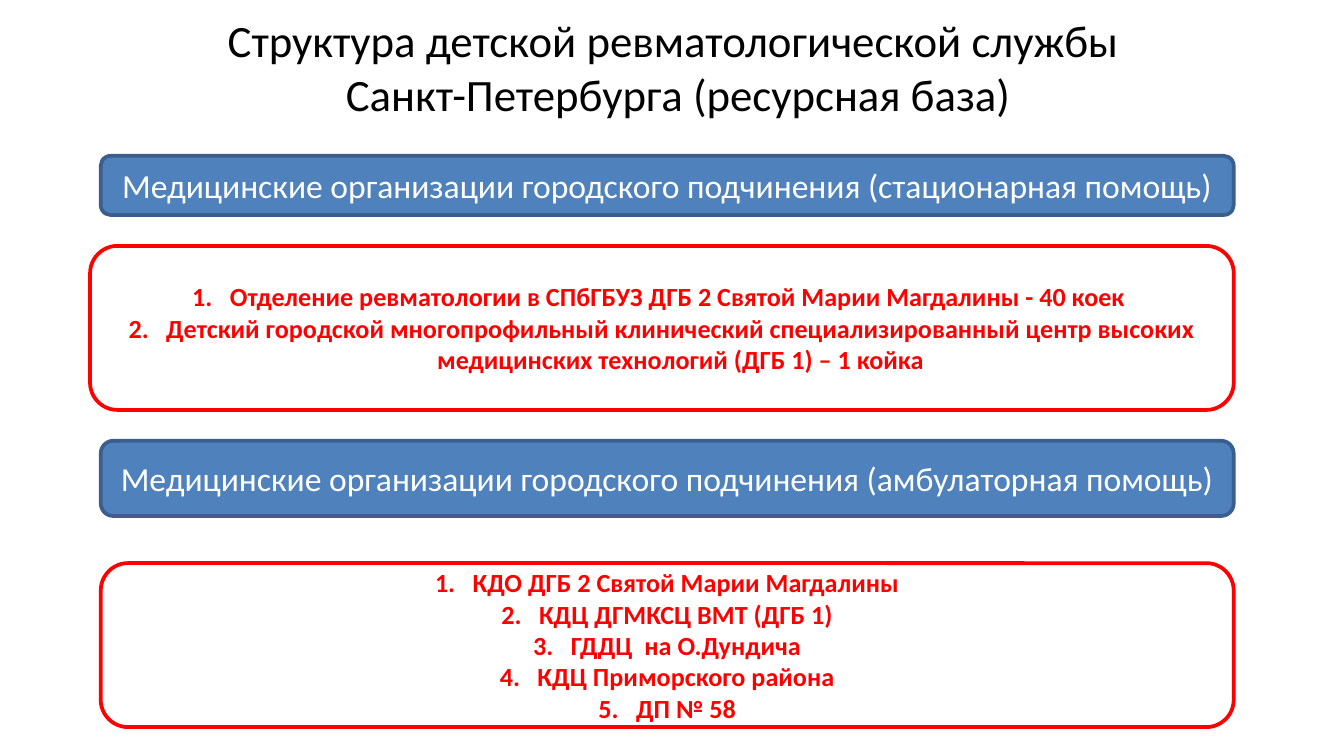
from lxml.etree import SubElement
from pptx import Presentation
from pptx.dml.color import RGBColor
from pptx.enum.shapes import MSO_SHAPE as Shape
from pptx.enum.text import MSO_ANCHOR as Anchor, MSO_AUTO_SIZE as AutoSize, PP_ALIGN as Align
from pptx.oxml.ns import qn
from pptx.util import Inches, Pt

FONT = "Calibri"
BLACK, WHITE, RED = "000000", "FFFFFF", "FF0000"
BLUE, DARK_BLUE = "4F81BD", "3A5F8C"
SLIDE_WIDTH = 10
SLIDE_HEIGHT = SLIDE_WIDTH * 9 / 16
LEFT, RIGHT = 0.75, 9.18
LIST_HEIGHT = 1.22
NUMBER_INDENT = 0.28

TITLE = ["Структура детской ревматологической службы ", "Санкт-Петербурга (ресурсная база)"]
SECTIONS = [
    {
        "heading": "Медицинские организации городского подчинения (стационарная помощь)",
        "heading_top": 1.16, "heading_height": 0.44,
        "list_left": 0.67, "list_top": 1.83,
        "items": [
            "Отделение ревматологии в СПбГБУЗ ДГБ 2 Святой Марии Магдалины - 40 коек ",
            "Детский городской многопрофильный клинический специализированный центр "
            "высоких медицинских технологий (ДГБ 1) – 1 койка",
        ],
    },
    {
        "heading": "Медицинские организации городского подчинения (амбулаторная помощь)",
        "heading_top": 3.28, "heading_height": 0.56,
        "list_left": LEFT, "list_top": 4.19,
        "items": [
            "КДО ДГБ 2 Святой Марии Магдалины",
            "КДЦ ДГМКСЦ ВМТ (ДГБ 1)",
            "ГДДЦ  на О.Дундича",
            "КДЦ Приморского района",
            "ДП № 58",
        ],
    },
]


def color(value):
    return RGBColor.from_string(value)


def add_numbering(para):
    """Number a paragraph with a hanging indent."""
    properties = para._p.get_or_add_pPr()
    properties.set("marL", str(Inches(NUMBER_INDENT)))
    properties.set("indent", str(Inches(-NUMBER_INDENT)))
    SubElement(properties, qn("a:buFont"), typeface="+mj-lt")
    SubElement(properties, qn("a:buAutoNum"), type="arabicPeriod")


def write(shape, lines, size, ink, bold=False, numbered=False):
    frame = shape.text_frame
    frame.word_wrap = True
    frame.auto_size = AutoSize.NONE
    frame.vertical_anchor = Anchor.MIDDLE
    frame.margin_left = frame.margin_right = Inches(0.07)
    frame.margin_top = frame.margin_bottom = Inches(0.04)
    for index, line in enumerate(lines):
        para = frame.add_paragraph() if index else frame.paragraphs[0]
        para.alignment = Align.CENTER
        if numbered:
            add_numbering(para)
        span = para.add_run()
        span.text = line
        span.font.name = FONT
        span.font.size = Pt(size)
        span.font.bold = bold
        span.font.color.rgb = color(ink)


def add_box(slide, left, top, height, outline, fill=None):
    """Add a rounded box that reaches the common right edge."""
    box = slide.shapes.add_shape(Shape.ROUNDED_RECTANGLE, Inches(left), Inches(top),
                                 Inches(RIGHT - left), Inches(height))
    box.shadow.inherit = False
    if fill:
        box.fill.solid()
        box.fill.fore_color.rgb = color(fill)
    else:
        box.fill.background()
    box.line.color.rgb = color(outline)
    box.line.width = Pt(2)
    return box


def main():
    deck = Presentation()
    deck.slide_width, deck.slide_height = Inches(SLIDE_WIDTH), Inches(SLIDE_HEIGHT)
    slide = deck.slides.add_slide(deck.slide_layouts.get_by_name("Title Only"))

    title = slide.shapes.title
    title.left, title.top = Inches(LEFT), Inches(0.06)
    title.width, title.height = Inches(8.59), Inches(0.87)
    write(title, TITLE, 24, BLACK)

    for section in SECTIONS:
        heading = add_box(slide, LEFT, section["heading_top"], section["heading_height"],
                          DARK_BLUE, fill=BLUE)
        write(heading, [section["heading"]], 18, WHITE)
        listing = add_box(slide, section["list_left"], section["list_top"], LIST_HEIGHT, RED)
        write(listing, section["items"], 14, RED, bold=True, numbered=True)

    deck.save("out.pptx")


if __name__ == "__main__":
    main()
